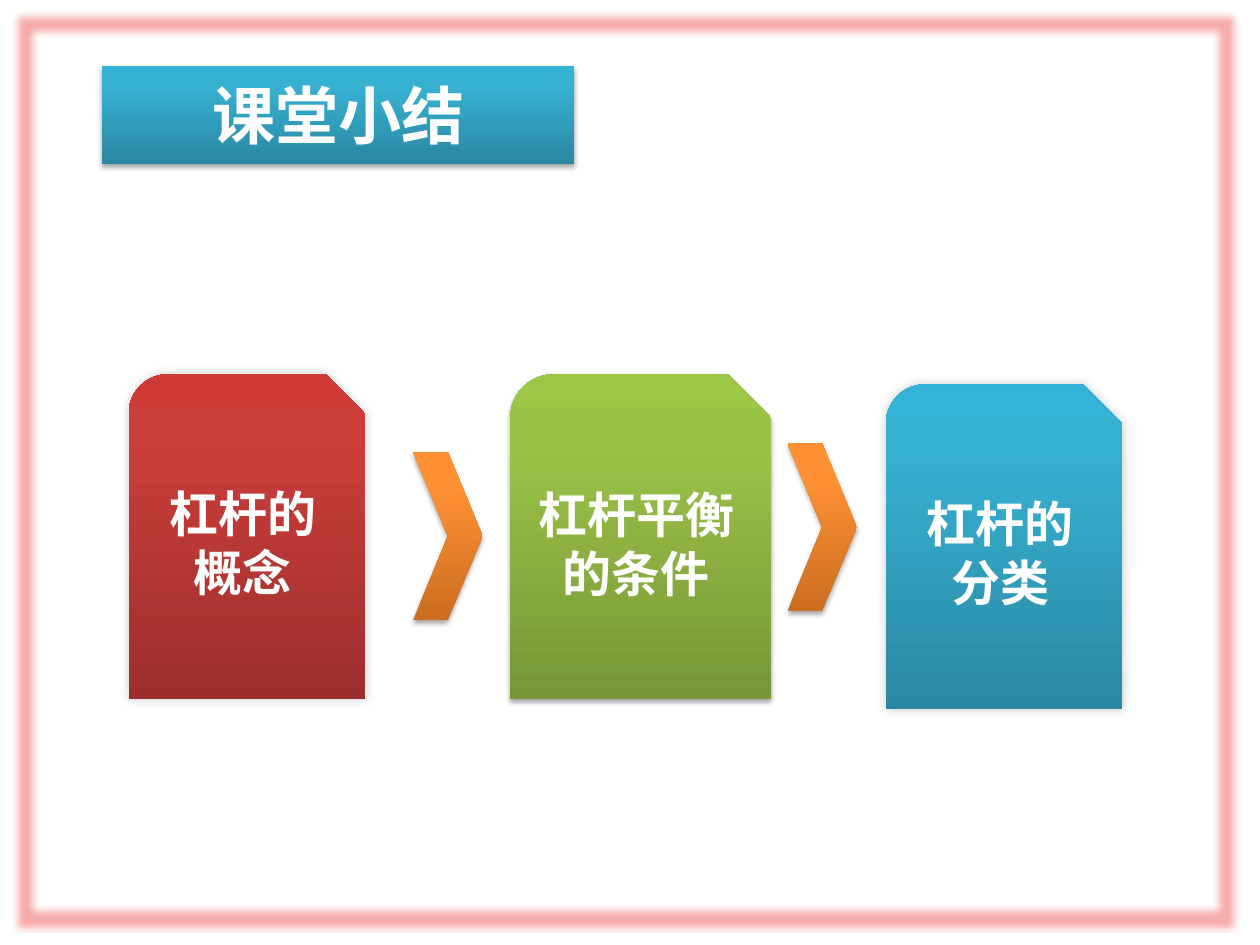
from lxml import etree
from pptx import Presentation
from pptx import util as u
from pptx.dml.color import RGBColor
from pptx.enum import shapes, text
from pptx.oxml import ns

WIDE, HIGH = 10, 7.5
FONT = "Noto Sans CJK SC"
WHITE = RGBColor(0xFF, 0xFF, 0xFF)
PINK = RGBColor(0xE6, 0xB9, 0xB8)
GLOW = RGBColor(0xEE, 0x2A, 0x2A)
BLACK = RGBColor(0, 0, 0)
BLUE = [RGBColor(0x2A, 0x88, 0xA2), RGBColor(0x37, 0xB1, 0xD2), RGBColor(0x34, 0xB4, 0xD6)]
RED = [RGBColor(0x9C, 0x2F, 0x2D), RGBColor(0xCB, 0x3E, 0x3A), RGBColor(0xCE, 0x3B, 0x37)]
GREEN = [RGBColor(0x77, 0x97, 0x37), RGBColor(0x9B, 0xC3, 0x48), RGBColor(0x9D, 0xC7, 0x46)]
ORANGE = [RGBColor(0xCC, 0x6E, 0x20), RGBColor(0xFF, 0x90, 0x34), RGBColor(0xFF, 0x91, 0x36)]
STOPS = [0, 80, 100]
DROP = (35, 3.1, 1.8, 90)
SOFT_R = (20, 6, 0, 315)
SOFT_L = (20, 6, 0, 225)
KIND = shapes.MSO_SHAPE


def node(root, tag, **vals):
    item = etree.SubElement(root, ns.qn("a:" + tag))
    for key, val in vals.items():
        item.set(key, str(val))
    return item


def apply(thing, form):
    for key, val in form.items():
        setattr(thing, key, val)


def place(left, top, wide, high):
    return dict(left=u.Inches(left), top=u.Inches(top),
                width=u.Inches(wide), height=u.Inches(high))


def tint(root, color, alpha):
    node(node(root, "srgbClr", val=color), "alpha", val=alpha * 1000)


def paint(shape, colors, shade):
    props = shape._element.spPr
    grad = node(props, "gradFill", rotWithShape=1)
    stops = node(grad, "gsLst")
    for pos, color in zip(STOPS, colors):
        node(node(stops, "gs", pos=pos * 1000), "srgbClr", val=color)
    node(grad, "lin", ang=270 * 60000, scaled=0)
    shape.line.fill.background()
    alpha, blur, dist, angle = shade
    cast = node(node(props, "effectLst"), "outerShdw", blurRad=u.Pt(blur),
                dist=u.Pt(dist), dir=angle * 60000, rotWithShape=0)
    tint(cast, BLACK, alpha)


def write(shape, words, size):
    frame = shape.text_frame
    apply(frame, dict(word_wrap=True, auto_size=text.MSO_AUTO_SIZE.NONE,
                      vertical_anchor=text.MSO_ANCHOR.MIDDLE))
    para = frame.paragraphs[0]
    para.alignment = text.PP_ALIGN.CENTER
    run = para.add_run()
    run.text = words
    apply(run.font, dict(size=u.Pt(size), bold=True, name=FONT))
    run.font.color.rgb = WHITE
    node(run._r.rPr, "ea", typeface=FONT)


def head(slide, words):
    title = slide.shapes.title
    apply(title, place(0.81, 0.52, 3.75, 0.78))
    node(node(title._element.spPr, "prstGeom", prst="roundRect"), "avLst")
    paint(title, BLUE, DROP)
    write(title, words, 36)


def block(slide, kind, box, colors, shade):
    shape = slide.shapes.add_shape(kind, *place(*box).values())
    paint(shape, colors, shade)
    return shape


def border(slide):
    box = place(0.2, 0.19, 9.53, 7.1)
    edge = slide.shapes.add_shape(KIND.FLOWCHART_PROCESS, *box.values())
    edge.fill.background()
    edge.line.color.rgb = PINK
    edge.line.width = u.Pt(0.5)
    glow = node(node(edge._element.spPr, "effectLst"), "glow", rad=u.Pt(8))
    tint(glow, GLOW, 40)


def main():
    deck = Presentation()
    apply(deck, dict(slide_width=u.Inches(WIDE), slide_height=u.Inches(HIGH)))
    slide = deck.slides.add_slide(deck.slide_layouts[5])
    head(slide, "课堂小结")
    cards = [
        ("杠杆的概念", 1.02, 2.97, 1.88, RED, SOFT_R),
        ("杠杆平衡的条件", 4.05, 2.97, 2.07, GREEN, DROP),
        ("杠杆的分类", 7.03, 3.05, 1.88, BLUE, SOFT_L),
    ]
    for words, left, top, wide, colors, shade in cards:
        card = block(slide, KIND.SNIP_ROUND_RECTANGLE, (left, top, wide, 2.58), colors, shade)
        write(card, words, 28)
    for left, top in [(3.28, 3.59), (6.25, 3.52)]:
        block(slide, KIND.CHEVRON, (left, top, 0.55, 1.33), ORANGE, DROP)
    border(slide)
    deck.save("out.pptx")


if __name__ == "__main__":
    main()
